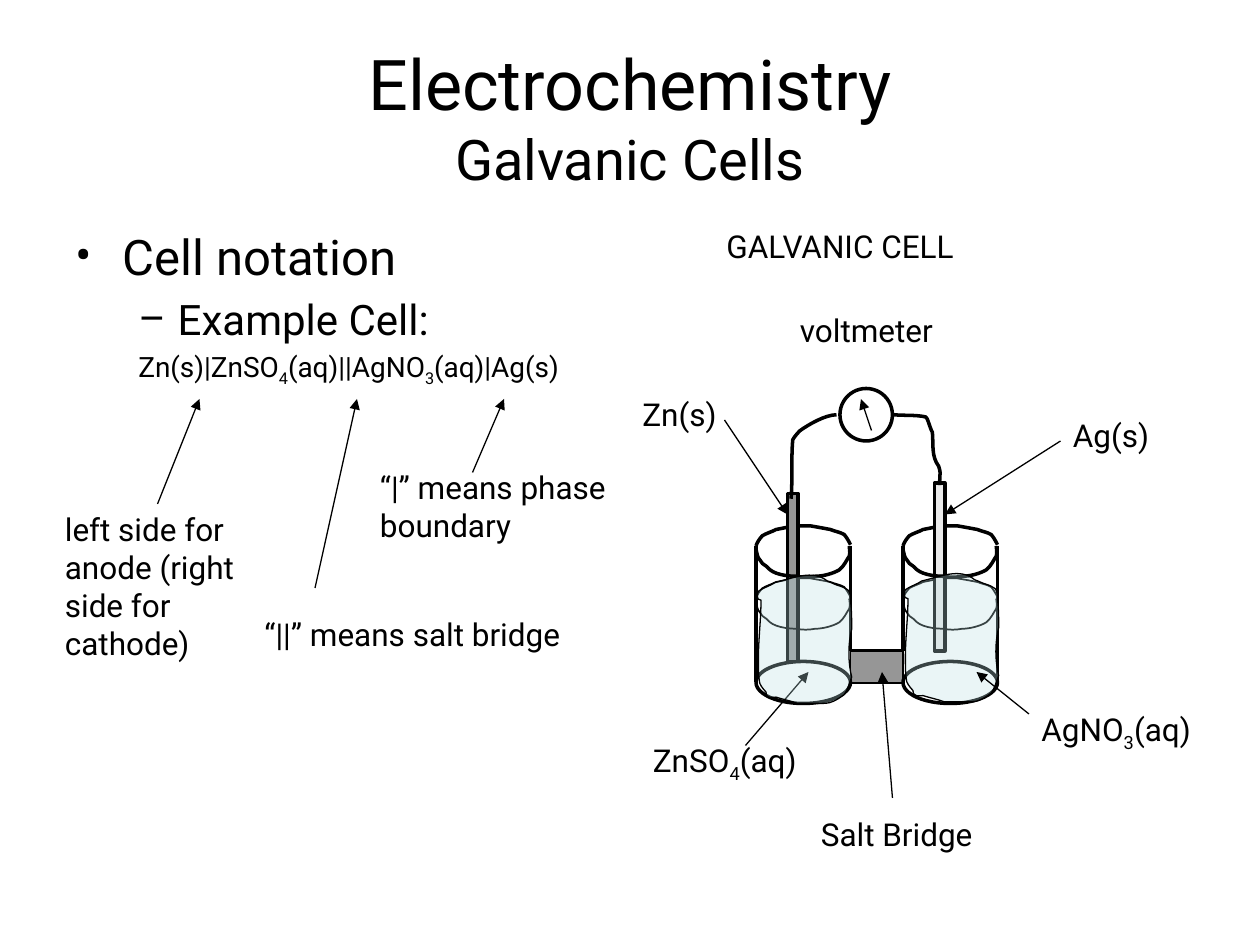
from lxml import etree
from pptx import Presentation
from pptx import util as u
from pptx.dml.color import RGBColor
from pptx.enum import shapes as kinds, text as t
from pptx.oxml.ns import qn

THEME = {
    "font": "Roboto", "ink": "000000", "zinc": "969696", "silver": "EAEAEA", "water": "BBE0E3",
    "title": 40, "subtitle": 32, "label": 18, "thin": 0.75, "medium": 1, "thick": 2,
}
TITLE = [("Electrochemistry", THEME["title"]), ("Galvanic Cells", THEME["subtitle"])]
BODY = [
    ("Cell notation", 28, "•", 27, -27),
    ("Example Cell:", 24, "–", 58.5, -22.5),
    ("Zn(s)|ZnSO_4_(aq)||AgNO_3_(aq)|Ag(s)", 16, None, 58.5, -22.5),
]
LABELS = [
    ("Salt Bridge", 462, 462, 150, 29),
    ("voltmeter", 450, 174, 96, 29),
    ("Zn(s)", 360, 222, 66, 29),
    ("ZnSO_4_(aq)", 366, 420, 102, 29),
    ("Ag(s)", 606, 234, 66, 29),
    ("AgNO_3_(aq)", 588, 402, 102, 29),
    ("GALVANIC CELL", 408, 126, 222, 29),
    ("left side for anode (right side for cathode)", 30, 288, 120, 94),
    ("“|” means phase boundary", 210, 264, 168, 50),
    ("“||” means salt bridge", 144, 348, 192, 29),
]
ARROWS_BEHIND_WATER = [
    (510, 456, 504, 384), (498, 246, 492, 228), (414, 240, 450, 294), (426, 426, 462, 384),
]
ARROWS = [
    (606, 252, 540, 294), (588, 408, 558, 384), (90, 288, 114, 228),
    (270, 270, 288, 228), (180, 336, 204, 228),
]
BEAKER_WIDTH, BEAKER_TOP, WATER_DROP = 54, 312, 30
BEAKERS = [(432, 282, THEME["zinc"], 0), (516, 276, THEME["silver"], -0.9)]
BRIDGE_TOP, BRIDGE_BOTTOM = 372, 390
BACK_RIM = [
    (0, 0), (0.7, -2.2), (2.2, -4.3), (3.6, -5.8), (5.8, -7.2), (8.6, -7.9), (11.5, -9.4),
    (15.1, -10.1), (20.2, -11.2), (23, -11.5), (26.6, -11.9), (27.4, -11.9), (31, -11.5),
    (33.8, -11), (38.9, -10.1), (42.5, -9.4), (45.4, -8.2), (48.2, -7.9), (50.4, -6.5),
    (51.8, -5), (53.3, -2.2), (54, -0.7),
]
FRONT_RIM = [
    (0, 2), (0.7, 4.3), (0.7, 6.5), (2.2, 7.9), (2.9, 9.4), (4.3, 10.8), (5.8, 11.5),
    (7.2, 13), (8.6, 14.4), (11.5, 15.5), (14.4, 16.6), (18.7, 17.3), (23, 17.3),
    (26.6, 18), (30.2, 18), (33.8, 17.3), (38.2, 17.3), (43.9, 15.8), (47.5, 13.7),
    (50.4, 11.5), (51.8, 7.9), (53.3, 5.8), (54, 3.6), (53.3, 1.4), (53.3, 0),
]
WATER = [
    (2.9, 31), (2.9, 41.8), (1.4, 53.3), (1.4, 64.8), (1.4, 69.1), (1.4, 74.2), (2.2, 78.5),
    (2.9, 80.6), (5.8, 83.5), (5.8, 83.5), (5.8, 84.2), (5.8, 85.7), (6.5, 85.7),
    (7.9, 87.1), (10.1, 86.4), (11.5, 86.4), (15.8, 87.8), (20.2, 88.6), (23.8, 90),
    (41, 89.3), (40.3, 92.2), (50.4, 85), (52.6, 82.1), (53.3, 78.5), (54.7, 74.9),
    (52.6, 66.2), (52.6, 56.2), (54.7, 47.5), (54.7, 42.5), (54.7, 36.7), (54, 31),
    (54, 28.8), (54, 26.6), (52.6, 25.2), (51.1, 23.8), (49.7, 23.8), (48.2, 23),
    (45.4, 22.3), (43.2, 20.9), (41, 20.2), (32.4, 13), (20.9, 18.7), (10.8, 20.9),
    (7.9, 23), (4.3, 23.8), (1.4, 25.9), (0.7, 27.4), (0, 31), (2.9, 31),
]
WIRES = [
    [(452, 285), (453, 273.5), (452, 262), (453, 251.3), (453.6, 249.8), (457, 246.2),
     (457, 246.2), (462, 242.6), (471.6, 237), (478, 237)],
    [(510.5, 237), (517, 237.6), (523.5, 237), (529, 238.3), (530, 238.3), (531.4, 244.8),
     (532.8, 247), (533.5, 253.4), (532, 260.6), (536.4, 266.4), (537.8, 271.4), (537, 268),
     (537, 277.2)],
]

presentation = Presentation()
presentation.slide_width, presentation.slide_height = u.Pt(720), u.Pt(540)
slide = presentation.slides.add_slide(presentation.slide_layouts[5])


def apply(target, **values):
    for name, value in values.items():
        setattr(target, name, value)


def paint(shape, fill=None, width=THEME["thin"]):
    if fill:
        shape.fill.solid()
        shape.fill.fore_color.rgb = RGBColor.from_string(fill)
    else:
        shape.fill.background()
    stroke(shape, width)
    shape.shadow.inherit = False


def stroke(shape, width):
    shape.line.color.rgb = RGBColor.from_string(THEME["ink"])
    shape.line.width = u.Pt(width)


def write(paragraph, content, size):
    for index, part in enumerate(content.split("_")):
        run = paragraph.add_run()
        run.text = part
        apply(run.font, name=THEME["font"], size=u.Pt(size))
        run.font.color.rgb = RGBColor.from_string(THEME["ink"])
        if index % 2:
            run.font._element.set("baseline", "-25000")


def text_box(left, top, width, height):
    box = slide.shapes.add_textbox(*map(u.Pt, (left, top, width, height)))
    box.text_frame.word_wrap = True
    return box.text_frame


def line(x1, y1, x2, y2, width=THEME["thick"], arrow=False):
    connector = slide.shapes.add_connector(
        kinds.MSO_CONNECTOR.STRAIGHT, *map(u.Pt, (x1, y1, x2, y2)))
    stroke(connector, width)
    if arrow:
        etree.SubElement(connector.line._get_or_add_ln(), qn("a:tailEnd"), type="triangle")
    etree.SubElement(connector._element.spPr, qn("a:effectLst"))


def preset(kind, left, top, width, height, fill=None, weight=THEME["thick"]):
    shape = slide.shapes.add_shape(kind, *map(u.Pt, (left, top, width, height)))
    paint(shape, fill, weight)


def curve(points, dx=0, dy=0, width=THEME["thick"], fill=None):
    first, *rest = [(u.Pt(x + dx), u.Pt(y + dy)) for x, y in points]
    builder = slide.shapes.build_freeform(*first)
    builder.add_line_segments(rest, close=bool(fill))
    shape = builder.convert_to_shape()
    segments = list(shape._element.iter(qn("a:lnTo")))
    for start in range(0, len(segments), 3):
        bezier = etree.Element(qn("a:cubicBezTo"))
        segments[start].addprevious(bezier)
        for segment in segments[start:start + 3]:
            bezier.append(segment[0])
            segment.getparent().remove(segment)
    paint(shape, fill, width)
    return shape


def rims(points, left):
    curve(points, left, BEAKER_TOP)
    curve(points, left, BEAKER_TOP + WATER_DROP, THEME["medium"])


title = slide.shapes.title
apply(title, left=u.Pt(36), top=u.Pt(21.6), width=u.Pt(648), height=u.Pt(90))
apply(title.text_frame, word_wrap=True, auto_size=t.MSO_AUTO_SIZE.NONE,
      vertical_anchor=t.MSO_ANCHOR.MIDDLE)
heading = title.text_frame.paragraphs[0]
heading.alignment = t.PP_ALIGN.CENTER
for index, (content, size) in enumerate(TITLE):
    if index:
        heading.add_line_break()
    write(heading, content, size)

body = text_box(36, 126, 318, 356)
for index, (content, size, bullet, margin, indent) in enumerate(BODY):
    paragraph = body.add_paragraph() if index else body.paragraphs[0]
    paragraph.level = min(index, 1)
    properties = paragraph._p.get_or_add_pPr()
    properties.set("marL", str(u.Pt(margin)))
    properties.set("indent", str(u.Pt(indent)))
    spacing = etree.SubElement(properties, qn("a:spcBef"))
    etree.SubElement(spacing, qn("a:spcPct"), val="20000")
    if bullet:
        etree.SubElement(properties, qn("a:buFont"), typeface=THEME["font"])
        etree.SubElement(properties, qn("a:buChar"), char=bullet)
    else:
        etree.SubElement(properties, qn("a:buNone"))
    write(paragraph, content, size)

bridge_left, bridge_right = BEAKERS[0][0] + BEAKER_WIDTH, BEAKERS[1][0]
for x, bottom in [(BEAKERS[0][0], BRIDGE_BOTTOM), (bridge_left, BRIDGE_TOP),
                  (bridge_right, BRIDGE_TOP), (bridge_right + BEAKER_WIDTH, BRIDGE_BOTTOM)]:
    line(x, BEAKER_TOP, x, bottom)
for y in (BRIDGE_TOP, BRIDGE_BOTTOM):
    line(bridge_left, y, bridge_right, y)
preset(kinds.MSO_SHAPE.RECTANGLE, bridge_left, BRIDGE_TOP, bridge_right - bridge_left,
       BRIDGE_BOTTOM - BRIDGE_TOP, THEME["zinc"], THEME["thin"])

for left, electrode_top, metal, _ in BEAKERS:
    preset(kinds.MSO_SHAPE.OVAL, left, 378, BEAKER_WIDTH, 24)
    rims(BACK_RIM, left)
    preset(kinds.MSO_SHAPE.RECTANGLE, left + 18, electrode_top, 6, 96, metal)
    rims(FRONT_RIM, left)
for wire in WIRES:
    curve(wire)
preset(kinds.MSO_SHAPE.OVAL, 480, 222, 30, 30)
for arrow in ARROWS_BEHIND_WATER:
    line(*arrow, width=THEME["thin"], arrow=True)
for left, _, _, shift in BEAKERS:
    water = curve(WATER, left, BEAKER_TOP + shift, THEME["thin"], THEME["water"])
    color = water.fill._xPr.find(qn("a:solidFill"))[0]
    etree.SubElement(color, qn("a:alpha"), val="30000")
for arrow in ARROWS:
    line(*arrow, width=THEME["thin"], arrow=True)
for content, *box in LABELS:
    write(text_box(*box).paragraphs[0], content, THEME["label"])

presentation.save("out.pptx")
